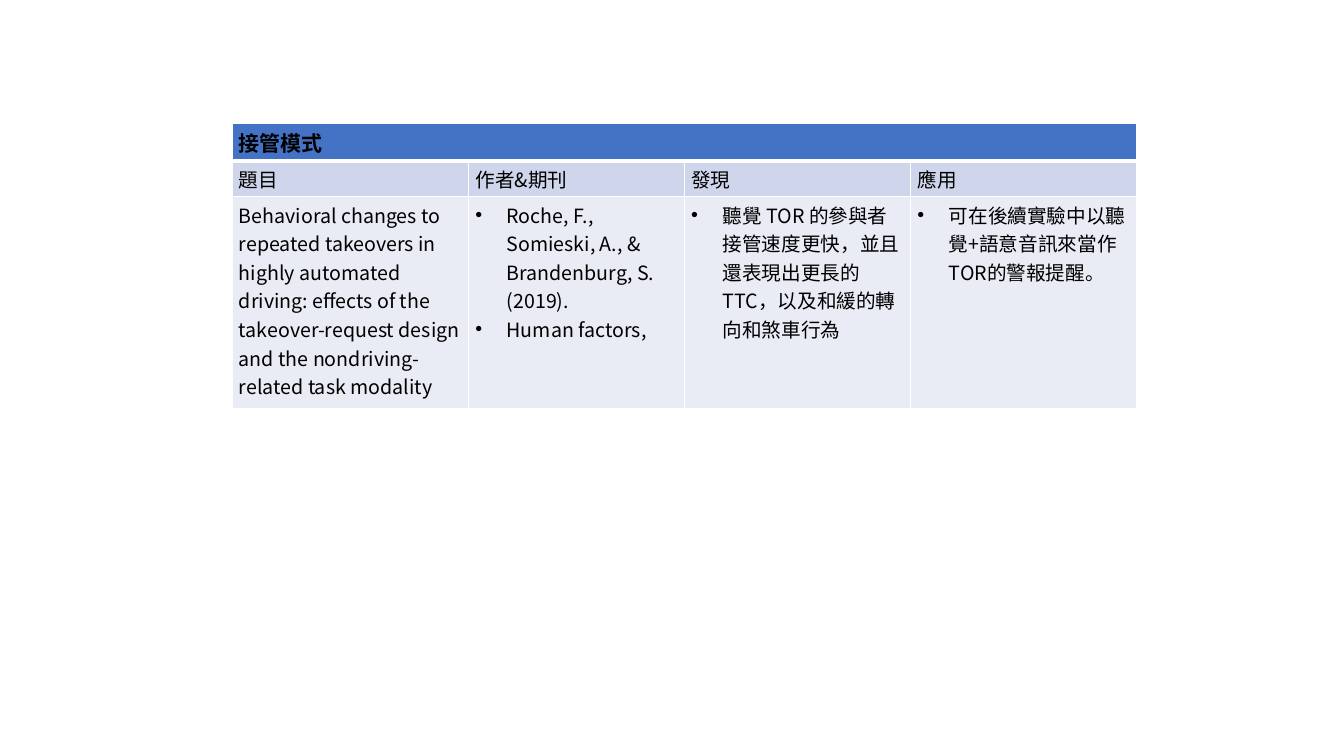
from lxml.etree import SubElement
from pptx import Presentation
from pptx.dml.color import RGBColor
from pptx.oxml import parse_xml
from pptx.oxml.ns import nsdecls, qn
from pptx.util import Cm, Pt


def tint(code):
    return RGBColor.from_string(code)


def edge(cell, side, width):
    return parse_xml(
        f'<a:{side} {nsdecls("a")} w="{Pt(width)}"><a:solidFill>'
        f'<a:srgbClr val="FFFFFF"/></a:solidFill></a:{side}>')


FONT = "Noto Sans CJK SC"
rows = [
    [["接管模式"], [], [], []],
    [["題目"], ["作者&期刊"], ["發現"], ["應用"]],
    [["Behavioral changes to repeated takeovers in highly automated driving: "
      "effects of the takeover-request design and the nondriving-related task modality"],
     ["Roche, F., Somieski, A., & Brandenburg, S. (2019).", "Human factors,"],
     ["聽覺 TOR 的參與者接管速度更快，並且還表現出更長的 TTC，以及和緩的轉向和煞車行為"],
     ["可在後續實驗中以聽覺+語意音訊來當作TOR的警報提醒。"]],
]
fills = ["4472C4", "CFD5EA", "E9EBF5"]
widths = [5.96, 5.44, 5.7, 5.7]
heights = [0.89, 0.89, 5.35]
margins = {"margin_left": Cm(0.17), "margin_right": Cm(0.17),
           "margin_top": Cm(0.09), "margin_bottom": Cm(0.09)}
title = {"size": Pt(15), "bold": True, "name": FONT}
body = {"size": Pt(14), "bold": False, "name": FONT}

deck = Presentation()
deck.slide_width, deck.slide_height = Cm(33.87), Cm(19.05)
slide = deck.slides.add_slide(deck.slide_layouts[6])
table = slide.shapes.add_table(3, 4, Cm(5.85), Cm(3.11), Cm(22.8), Cm(7.13)).table
for col, width in zip(table.columns, widths):
    col.width = Cm(width)
for row, height in zip(table.rows, heights):
    row.height = Cm(height)
table.cell(0, 0).merge(table.cell(0, 3))

for r, row in enumerate(rows):
    for c, texts in enumerate(row):
        cell = table.cell(r, c)
        for key, value in margins.items():
            setattr(cell, key, value)
        cell.fill.solid()
        cell.fill.fore_color.rgb = tint(fills[r])
        thick = {"lnL": 1, "lnR": 1, "lnT": 3 if r == 1 else 1, "lnB": 3 if r == 0 else 1}
        for i, (side, width) in enumerate(thick.items()):
            cell._tc.tcPr.insert(i, edge(cell, side, width))
        for i, text in enumerate(texts):
            frame = cell.text_frame
            para = frame.add_paragraph() if i else frame.paragraphs[0]
            run = para.add_run()
            run.text = text
            for key, value in (body if r else title).items():
                setattr(run.font, key, value)
            run.font.color.rgb = tint("000000")
            SubElement(run.font._element, qn("a:ea"), typeface=FONT)
            if r == 2 and c:
                props = para._p.get_or_add_pPr()
                props.set("marL", str(Cm(0.79)))
                props.set("indent", str(-Cm(0.79)))
                SubElement(props, qn("a:buFont"), typeface="Arial")
                SubElement(props, qn("a:buChar"), char="•")

deck.save("out.pptx")
